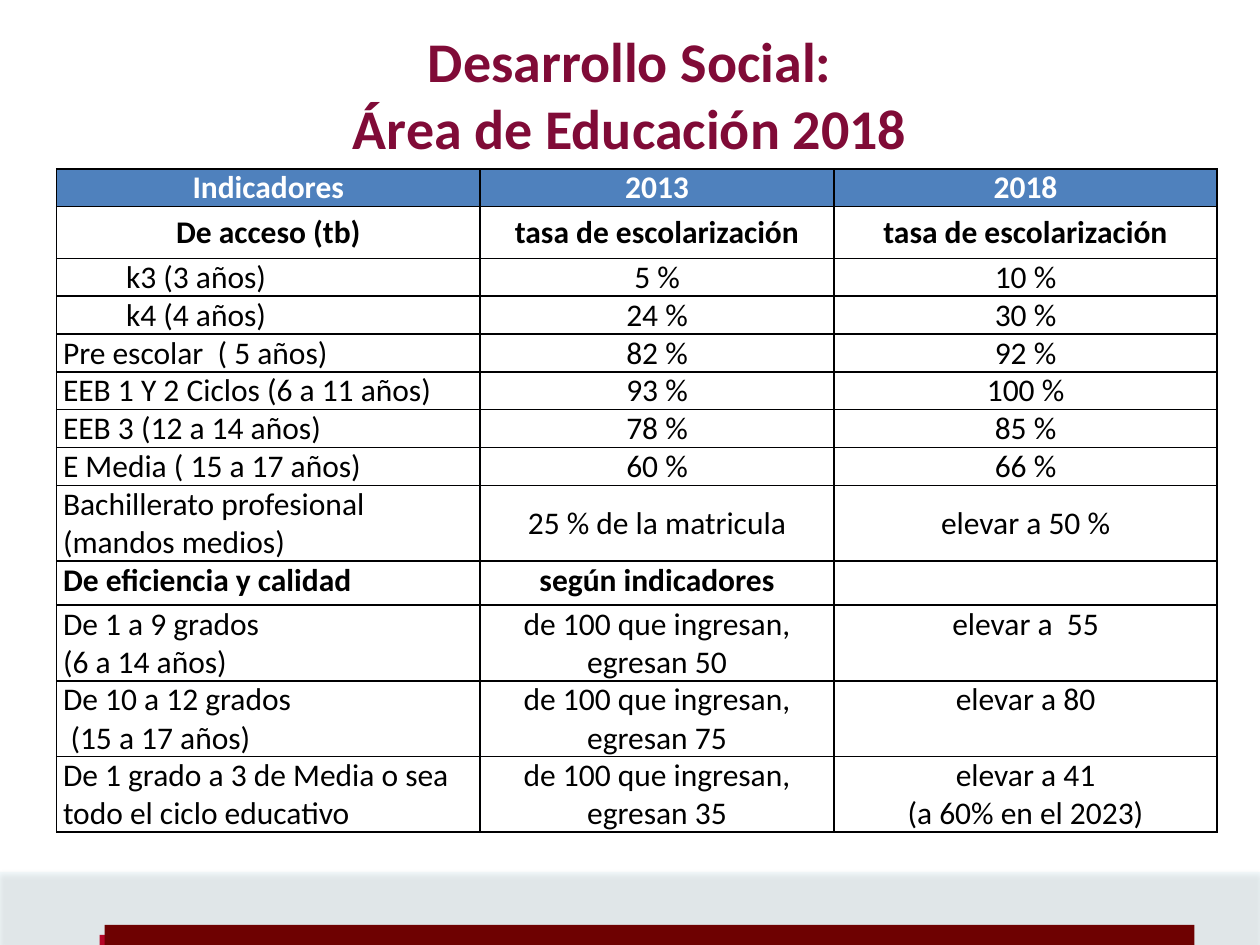
import dataclasses

import lxml.etree
import pptx
import pptx.dml.color
import pptx.enum.shapes
import pptx.enum.text
import pptx.oxml
import pptx.oxml.ns
import pptx.util

Inches = pptx.util.Inches
Align = pptx.enum.text.PP_ALIGN
Anchor = pptx.enum.text.MSO_ANCHOR


@dataclasses.dataclass(frozen=True)
class Theme:
    font: str = "Calibri"
    title_size: int = 32
    table_size: int = 18
    title: str = "800B37"
    header: str = "4F81BD"
    header_text: str = "FFFFFF"
    text: str = "000000"
    border: str = "000001"
    border_width: int = 1
    band: str = "DBEEF4"
    accent: str = "B60527"
    bar: str = "6E0101"


THEME = Theme()
WIDTH, HEIGHT = 10, 7.5
TITLE = "Desarrollo Social:\nÁrea de Educación 2018"
COLUMNS = [3.36, 2.81, 3.04]
LINE = 0.3
ROWS = [LINE, 0.41] + [LINE] * 6 + [2 * LINE, 0.35] + [2 * LINE] * 3
SECTION_ROWS = (1, 9)
MIDDLE_ROWS = range(1, 9)
INDENTS = {2: [0.5], 3: [0.5], 11: [0, 0.06]}
CELLS = [
    ("Indicadores", "2013", "2018"),
    ("De acceso (tb)", "tasa de escolarización", "tasa de escolarización"),
    ("k3 (3 años)", "5 %", "10 %"),
    ("k4 (4 años)", "24 %", "30 %"),
    ("Pre escolar  ( 5 años)", "82 %", "92 %"),
    ("EEB 1 Y 2 Ciclos (6 a 11 años)", "93 %", "100 %"),
    ("EEB 3 (12 a 14 años)", "78 %", "85 %"),
    ("E Media ( 15 a 17 años)", "60 %", "66 %"),
    ("Bachillerato profesional (mandos medios)", "25 % de la matricula", "elevar a 50 %"),
    ("De eficiencia y calidad", "según indicadores", ""),
    ("De 1 a 9 grados\n(6 a 14 años)", "de 100 que ingresan, egresan 50", "elevar a  55"),
    ("De 10 a 12 grados\n(15 a 17 años)", "de 100 que ingresan, egresan 75", "elevar a 80"),
    ("De 1 grado a 3 de Media o sea todo el ciclo educativo",
     "de 100 que ingresan, egresan 35", "elevar a 41\n(a 60% en el 2023)"),
]


def rgb(color):
    return pptx.dml.color.RGBColor.from_string(color)


def write_text(frame, text, size, color, bold=False, align=Align.CENTER, indents=()):
    """Fill a text frame, one paragraph a line; indents are left margins in inches."""
    frame.word_wrap = True
    frame.text = text
    for index, paragraph in enumerate(frame.paragraphs):
        if index < len(indents):
            paragraph._p.get_or_add_pPr().set("marL", str(Inches(indents[index])))
        paragraph.alignment = align
        paragraph.font.name = THEME.font
        paragraph.font.size = pptx.util.Pt(size)
        paragraph.font.bold = bold
        paragraph.font.color.rgb = rgb(color)


def add_block(slide, box, color):
    shape = slide.shapes.add_shape(
        pptx.enum.shapes.MSO_SHAPE.RECTANGLE, *map(Inches, box))
    shape.shadow.inherit = False
    shape.fill.solid()
    shape.fill.fore_color.rgb = rgb(color)
    shape.line.fill.background()
    return shape


def soften(shape):
    """Make the fill 32 % opaque and add a soft shadow below."""
    namespace = pptx.oxml.ns.nsdecls("a")
    properties = shape._element.spPr
    color = properties.find(".//" + pptx.oxml.ns.qn("a:srgbClr"))
    lxml.etree.SubElement(color, pptx.oxml.ns.qn("a:alpha"), val="32000")
    properties.find(pptx.oxml.ns.qn("a:effectLst")).append(pptx.oxml.parse_xml(
        f'<a:outerShdw {namespace} blurRad="{pptx.util.Pt(3.1)}" dist="{pptx.util.Pt(1.8)}" '
        'dir="5400000" rotWithShape="0"><a:srgbClr val="000000">'
        '<a:alpha val="35000"/></a:srgbClr></a:outerShdw>'))


def add_footer(slide, box):
    left, top, width, height = box
    soften(add_block(slide, box, THEME.band))
    bottom = top + height
    for color, start, share, thickness in (
            (THEME.accent, 0.079, 0.843, 0.08), (THEME.bar, 0.083, 0.865, 0.16)):
        add_block(slide, (left + start * width, bottom - thickness,
                          share * width, thickness), color)


def add_title(slide, box):
    shape = slide.shapes.add_textbox(*map(Inches, box))
    write_text(shape.text_frame, TITLE, THEME.title_size, THEME.title, bold=True)


def add_borders(cell):
    properties = cell._tc.get_or_add_tcPr()
    for side in "LRTB":
        properties.append(pptx.oxml.parse_xml(
            f'<a:ln{side} {pptx.oxml.ns.nsdecls("a")} w="{pptx.util.Pt(THEME.border_width)}">'
            f'<a:solidFill><a:srgbClr val="{THEME.border}"/></a:solidFill></a:ln{side}>'))


def style_cell(cell, row, column):
    header = row == 0
    add_borders(cell)
    if header:
        cell.fill.solid()
        cell.fill.fore_color.rgb = rgb(THEME.header)
    else:
        cell.fill.background()
    cell.margin_left = cell.margin_right = Inches(0.05)
    cell.margin_top = cell.margin_bottom = 0
    cell.vertical_anchor = Anchor.MIDDLE if row in MIDDLE_ROWS else Anchor.TOP
    label = column == 0 and row > 1
    write_text(cell.text_frame, CELLS[row][column], THEME.table_size,
               THEME.header_text if header else THEME.text,
               bold=header or row in SECTION_ROWS,
               align=Align.LEFT if label else Align.CENTER,
               indents=INDENTS.get(row, ()) if label else ())


def add_indicators(slide, box):
    table = slide.shapes.add_table(len(ROWS), len(COLUMNS), *map(Inches, box)).table
    table.horz_banding = False
    for column, share in zip(table.columns, COLUMNS):
        column.width = Inches(box[2] * share / sum(COLUMNS))
    for row, share in zip(table.rows, ROWS):
        row.height = Inches(box[3] * share / sum(ROWS))
    for row in range(len(ROWS)):
        for column in range(len(COLUMNS)):
            style_cell(table.cell(row, column), row, column)


def main():
    presentation = pptx.Presentation()
    presentation.slide_width = Inches(WIDTH)
    presentation.slide_height = Inches(HEIGHT)
    slide = presentation.slides.add_slide(presentation.slide_layouts[6])
    add_footer(slide, (0, 6.92, WIDTH, HEIGHT - 6.92))
    add_title(slide, (0.47, 0.16, 9.06, 1.18))
    add_indicators(slide, (0.45, 1.34, sum(COLUMNS), sum(ROWS)))
    presentation.save("out.pptx")


if __name__ == "__main__":
    main()
